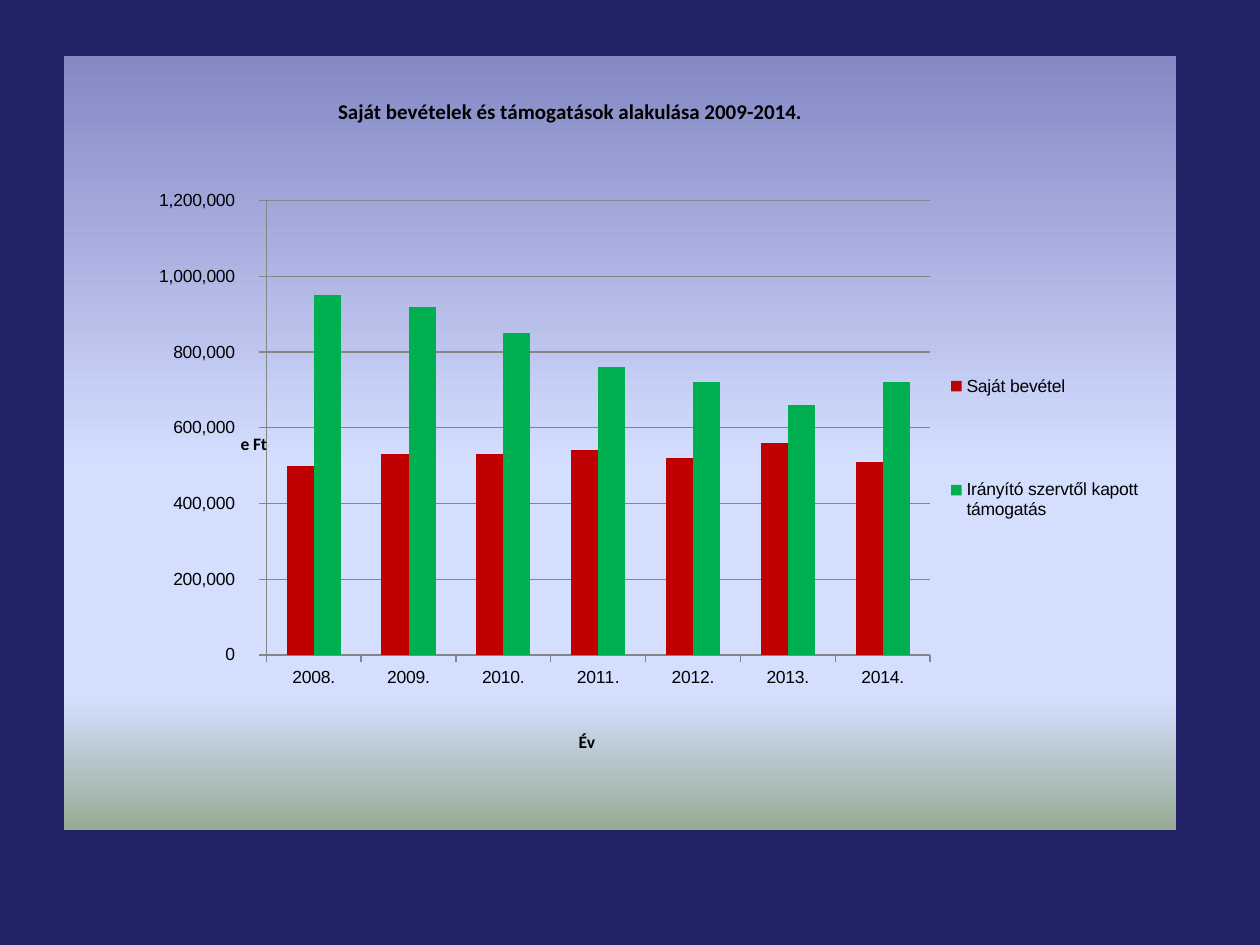
from lxml import etree
from pptx import Presentation, util as u
from pptx.chart.data import CategoryChartData
from pptx.dml.color import RGBColor
from pptx.enum import chart as ch
from pptx.oxml import parse_xml
from pptx.oxml.ns import nsdecls, qn

PX = 914400 // 126
NAVY = RGBColor(0x22, 0x22, 0x67)
BLACK = RGBColor(0, 0, 0)
GRAY = RGBColor(0x86, 0x86, 0x86)
RED = RGBColor(0xC0, 0, 0)
GREEN = RGBColor(0, 0xB0, 0x50)
BACKDROP = [(0, "8488C4"), (53, "D4DEFF"), (83, "D4DEFF"), (100, "96AB94")]
LEFT, TOP, WIDTH, HEIGHT = 64, 56, 1112, 774


def place(element, x, y, size=None, inner=False):
    """Set a manual layout, in slide px, on a chart part."""
    layout = element.find(qn("c:layout"))
    if layout is None:
        layout = etree.Element(qn("c:layout"))
        before = {"plotArea": 0, "title": 1, "legend": 1}
        element.insert(before[etree.QName(element).localname], layout)
    for child in list(layout):
        layout.remove(child)
    values = [("layoutTarget", "inner")] if inner else []
    values += [("xMode", "edge"), ("yMode", "edge"),
               ("x", round((x - LEFT) / WIDTH, 3)), ("y", round((y - TOP) / HEIGHT, 3))]
    if size:
        values += [("w", round(size[0] / WIDTH, 3)), ("h", round(size[1] / HEIGHT, 3))]
    manual = etree.SubElement(layout, qn("c:manualLayout"))
    for tag, value in values:
        etree.SubElement(manual, qn("c:" + tag)).set("val", str(value))


def add_title(owner, wording, points, x, y):
    title = owner.chart_title if hasattr(owner, "chart_title") else owner.axis_title
    frame = title.text_frame
    frame.text = wording
    font = frame.paragraphs[0].runs[0].font
    font.name, font.size, font.bold = "Calibri", u.Pt(points), True
    font.color.rgb = BLACK
    frame._txBody.find(qn("a:bodyPr")).set("rot", "0")
    place(title._element, x, y)


prs = Presentation()
prs.slide_width, prs.slide_height = u.Inches(10), u.Inches(7.5)
slide = prs.slides.add_slide(prs.slide_layouts[6])
slide.background.fill.solid()
slide.background.fill.fore_color.rgb = NAVY

revenue = CategoryChartData(number_format="#,##0")
revenue.categories = [f"{year}." for year in range(2008, 2015)]
revenue.add_series("Saját bevétel",
                   [500000, 530000, 530000, 540000, 520000, 560000, 510000])
revenue.add_series("Irányító szervtől kapott támogatás",
                   [950000, 920000, 850000, 760000, 720000, 660000, 720000])
chart = slide.shapes.add_chart(
    ch.XL_CHART_TYPE.COLUMN_CLUSTERED,
    *(n * PX for n in (LEFT, TOP, WIDTH, HEIGHT)), revenue).chart
chart.font.name, chart.font.size = "Arial", u.Pt(10)
chart.font.color.rgb = BLACK

stops = "".join(f'<a:gs pos="{pos * 1000}"><a:srgbClr val="{color}"/></a:gs>'
                for pos, color in BACKDROP)
chart._chartSpace.find(qn("c:txPr")).addprevious(parse_xml(
    f'<c:spPr {nsdecls("c", "a")}><a:gradFill><a:gsLst>{stops}</a:gsLst>'
    '<a:lin ang="5400000" scaled="0"/></a:gradFill><a:ln><a:noFill/></a:ln></c:spPr>'))

columns = chart.plots[0]
columns.gap_width, columns.overlap = 150, 0
columns.vary_by_categories = False
for series, color in zip(columns.series, (RED, GREEN)):
    series.format.fill.solid()
    series.format.fill.fore_color.rgb = color

years, amounts = chart.category_axis, chart.value_axis
for axis in (years, amounts):
    axis.major_tick_mark = ch.XL_TICK_MARK.CROSS
    axis.minor_tick_mark = ch.XL_TICK_MARK.NONE
    axis.format.line.color.rgb = GRAY
years.has_major_gridlines = False
years.major_tick_mark = ch.XL_TICK_MARK.OUTSIDE
amounts.major_tick_mark = ch.XL_TICK_MARK.OUTSIDE
amounts.minimum_scale, amounts.maximum_scale, amounts.major_unit = 0, 1200000, 200000
amounts.major_gridlines.format.line.color.rgb = GRAY
amounts.tick_labels.number_format = r"#,##0\ _F_t"
amounts.tick_labels.number_format_is_linked = False

chart.has_legend = True
chart.legend.position = ch.XL_LEGEND_POSITION.RIGHT
chart.legend.include_in_layout = False
place(chart.legend._element, 934, 292, (222, 312))
place(chart._chartSpace.chart.plotArea, 266, 201, (664, 454), inner=True)

add_title(chart, "Saját bevételek és támogatások alakulása 2009-2014.", 12, 334, 93)
add_title(years, "Év", 10, 575, 728)
add_title(amounts, "e Ft", 10, 238, 430)

prs.save("out.pptx")
